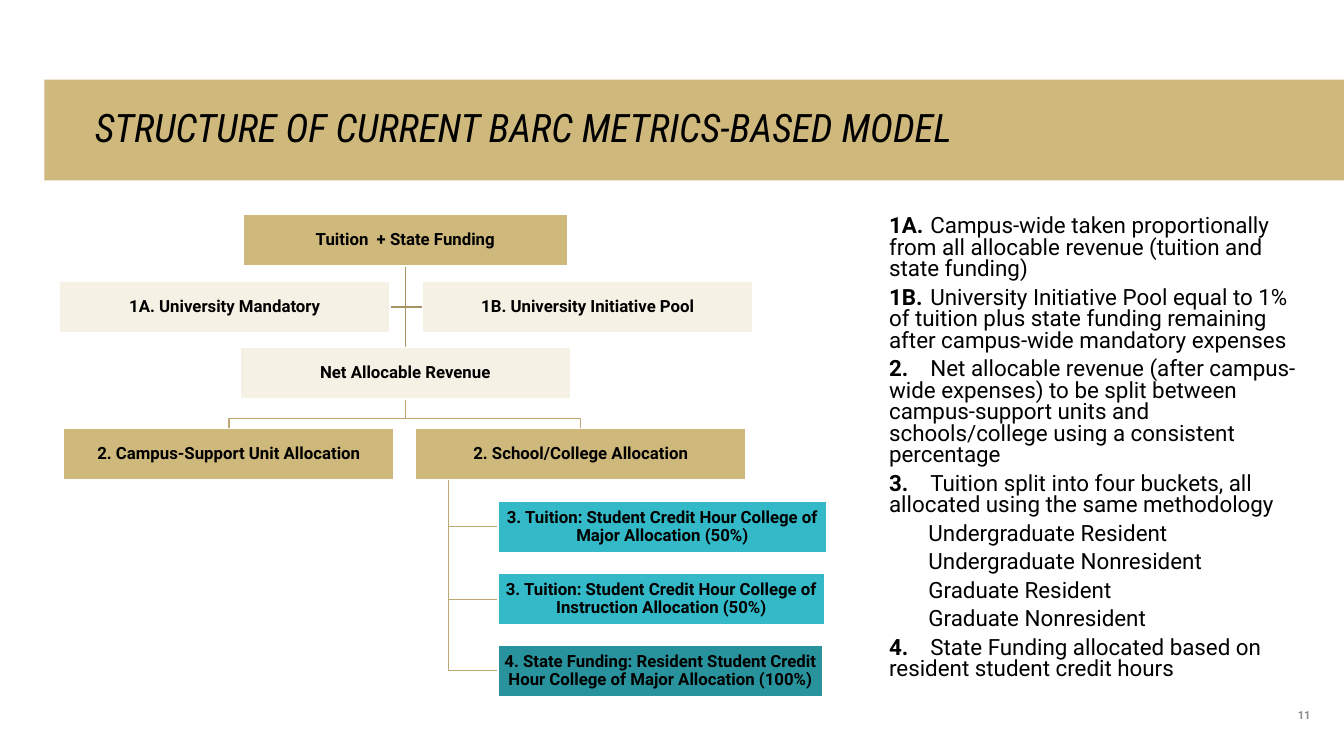
from pptx import Presentation
from pptx.dml.color import RGBColor
from pptx.enum.shapes import MSO_SHAPE
from pptx.enum.text import MSO_ANCHOR, MSO_AUTO_SIZE, PP_ALIGN
from pptx.util import Inches, Pt

RECTANGLE = MSO_SHAPE.RECTANGLE
LEFT, CENTER, RIGHT = PP_ALIGN.LEFT, PP_ALIGN.CENTER, PP_ALIGN.RIGHT
MIDDLE, BOTTOM = MSO_ANCHOR.MIDDLE, MSO_ANCHOR.BOTTOM
NO_AUTOFIT = MSO_AUTO_SIZE.NONE
TITLE_ONLY = 5

WIDTH, HEIGHT = 13.33, 7.5
GOLD, CREAM, AQUA, TEAL = "CFB87C", "F5F1E5", "33B9C7", "28939D"
DARK_GOLD, LIGHT_GOLD = "A69363", "BCA771"
BLACK, WHITE, GRAY = "000000", "FFFFFF", "8C8C8C"

BOX_WIDTH, BOX_HEIGHT = 3.28, 0.51
TRUNK = 4.02
SPINE = 4.45
BUCKET_LEFT = 4.94
ROWS = [2.13, 2.79, 3.45, 4.25, 4.97, 5.69, 6.4]

# key: (text, left, row, width, fill)
BOXES = {
    "funding": ("Tuition  + State Funding", 2.41, 0, 3.22, GOLD),
    "net": ("Net Allocable Revenue", 2.38, 2, BOX_WIDTH, CREAM),
    "support": ("2. Campus-Support Unit Allocation", 0.63, 3, BOX_WIDTH, GOLD),
    "school": ("2. School/College Allocation", 4.12, 3, BOX_WIDTH, GOLD),
    "major": ("3. Tuition: Student Credit Hour College of Major Allocation (50%)",
              BUCKET_LEFT, 4, 3.26, AQUA),
    "instruction": ("3. Tuition: Student Credit Hour College of Instruction Allocation (50%)",
                    BUCKET_LEFT, 5, 3.24, AQUA),
    "state": ("4. State Funding: Resident Student Credit Hour College of Major Allocation (100%)",
              BUCKET_LEFT, 6, 3.22, TEAL),
    "mandatory": ("1A. University Mandatory", 0.59, 1, BOX_WIDTH, CREAM),
    "pool": ("1B. University Initiative Pool", 4.19, 1, BOX_WIDTH, CREAM),
}

NOTES = [
    ("1A.", "Campus-wide taken proportionally from all allocable revenue (tuition and state funding)"),
    ("1B.", "University Initiative Pool equal to 1% of tuition plus state funding remaining "
            "after campus-wide mandatory expenses"),
    ("2.", "Net allocable revenue (after campus-wide expenses) to be split between "
           "campus-support units and schools/college using a consistent percentage"),
    ("3.", "Tuition split into four buckets, all allocated using the same methodology"),
    ("", "Undergraduate Resident"),
    ("", "Undergraduate Nonresident"),
    ("", "Graduate Resident"),
    ("", "Graduate Nonresident"),
    ("4.", "State Funding allocated based on resident student credit hours"),
]
NOTE_INDENT, BUCKET_INDENT, LABEL_GAP = 0.3, 0.69, 0.41


def color(value):
    return RGBColor.from_string(value)


def set_font(font, size, fill=BLACK, name="Roboto", **styles):
    font.name = name
    font.size = Pt(size)
    font.color.rgb = color(fill)
    for style, value in styles.items():
        setattr(font, style, value)


def set_frame(frame, margins, anchor=None):
    """Set wrapping, anchor and the left, top, right and bottom margins."""
    frame.word_wrap = True
    frame.auto_size = NO_AUTOFIT
    frame.vertical_anchor = anchor
    (frame.margin_left, frame.margin_top,
     frame.margin_right, frame.margin_bottom) = map(Inches, margins)


def add_title(slide, text):
    title = slide.shapes.title
    title.left, title.top = Inches(0.44), Inches(0.79)
    title.width, title.height = Inches(WIDTH - 0.44), Inches(1)
    title.fill.solid()
    title.fill.fore_color.rgb = color(GOLD)
    set_frame(title.text_frame, (0.5, 0.05, 1, 0.05), MIDDLE)
    paragraph = title.text_frame.paragraphs[0]
    paragraph.text = text
    paragraph.alignment = LEFT
    paragraph.line_spacing = 0.9
    set_font(paragraph.font, 28, name="Roboto Condensed", italic=True)


def add_box(slide, text, left, row, width, fill):
    box = slide.shapes.add_shape(RECTANGLE, Inches(left), Inches(ROWS[row]),
                                 Inches(width), Inches(BOX_HEIGHT))
    box.shadow.inherit = False
    box.fill.solid()
    box.fill.fore_color.rgb = color(fill)
    box.line.color.rgb = color(WHITE)
    box.line.width = Pt(1)
    set_frame(box.text_frame, [0.01] * 4, MIDDLE)
    paragraph = box.text_frame.paragraphs[0]
    paragraph.text = text
    paragraph.alignment = CENTER
    paragraph.line_spacing = 0.9
    set_font(paragraph.font, 12, bold=True)


def add_bent_line(slide, points, line_color=LIGHT_GOLD):
    start, *others = [(Inches(x), Inches(y)) for x, y in points]
    builder = slide.shapes.build_freeform(*start)
    builder.add_line_segments(others, close=False)
    line = builder.convert_to_shape()
    line.shadow.inherit = False
    line.fill.background()
    line.line.color.rgb = color(line_color)
    line.line.width = Pt(1)


def center(key):
    _, left, row, width, _ = BOXES[key]
    return left + width / 2, ROWS[row] + BOX_HEIGHT / 2


def add_tree_lines(slide):
    bottoms = [top + BOX_HEIGHT for top in ROWS]
    middle = center("pool")[1]
    for x in (BOXES["pool"][1], BOXES["mandatory"][1] + BOX_WIDTH):
        add_bent_line(slide, [(TRUNK, bottoms[0]), (TRUNK, middle), (x, middle)], DARK_GOLD)

    for key in ("state", "instruction", "major"):
        y = center(key)[1]
        add_bent_line(slide, [(SPINE, bottoms[3]), (SPINE, y), (BUCKET_LEFT, y)])

    fork = ROWS[3] - 0.1
    for key in ("school", "support"):
        x = center(key)[0]
        add_bent_line(slide, [(TRUNK, bottoms[2]), (TRUNK, fork), (x, fork), (x, ROWS[3])])

    add_bent_line(slide, [(TRUNK, bottoms[0]), (TRUNK, ROWS[2])], DARK_GOLD)


def add_text_box(slide, left, top, width, height, margins, anchor=None):
    box = slide.shapes.add_textbox(*map(Inches, (left, top, width, height)))
    set_frame(box.text_frame, margins, anchor)
    return box.text_frame


def set_indent(paragraph, indent):
    properties = paragraph._p.get_or_add_pPr()
    properties.set("marL", str(Inches(indent)))
    properties.set("indent", "0")
    properties.set("defTabSz", str(Inches(LABEL_GAP)))


def add_notes(slide):
    frame = add_text_box(slide, 8.42, 2.1, 4.66, 4.81, (0.1, 0.05, 0.1, 0.05))
    for index, (label, text) in enumerate(NOTES):
        paragraph = frame.paragraphs[0] if index == 0 else frame.add_paragraph()
        set_indent(paragraph, NOTE_INDENT if label else BUCKET_INDENT)
        if label:
            run = paragraph.add_run()
            run.text = label
            run.font.bold = True
            text = "\t" + text
        paragraph.add_run().text = text
        paragraph.line_spacing = 0.8
        if index:
            paragraph.space_before = Pt(5)
        set_font(paragraph.font, 16)


def add_slide_number(slide, number):
    frame = add_text_box(slide, 12.15, 6.66, 0.85, 0.5, [0] * 4, BOTTOM)
    paragraph = frame.paragraphs[0]
    paragraph.text = number
    paragraph.alignment = RIGHT
    set_font(paragraph.font, 8, GRAY, bold=True)


def main():
    presentation = Presentation()
    presentation.slide_width, presentation.slide_height = Inches(WIDTH), Inches(HEIGHT)
    slide = presentation.slides.add_slide(presentation.slide_layouts[TITLE_ONLY])
    add_title(slide, "STRUCTURE OF CURRENT BARC METRICS-BASED MODEL")
    add_tree_lines(slide)
    for box in BOXES.values():
        add_box(slide, *box)
    add_notes(slide)
    add_slide_number(slide, "11")
    presentation.save("out.pptx")


if __name__ == "__main__":
    main()
